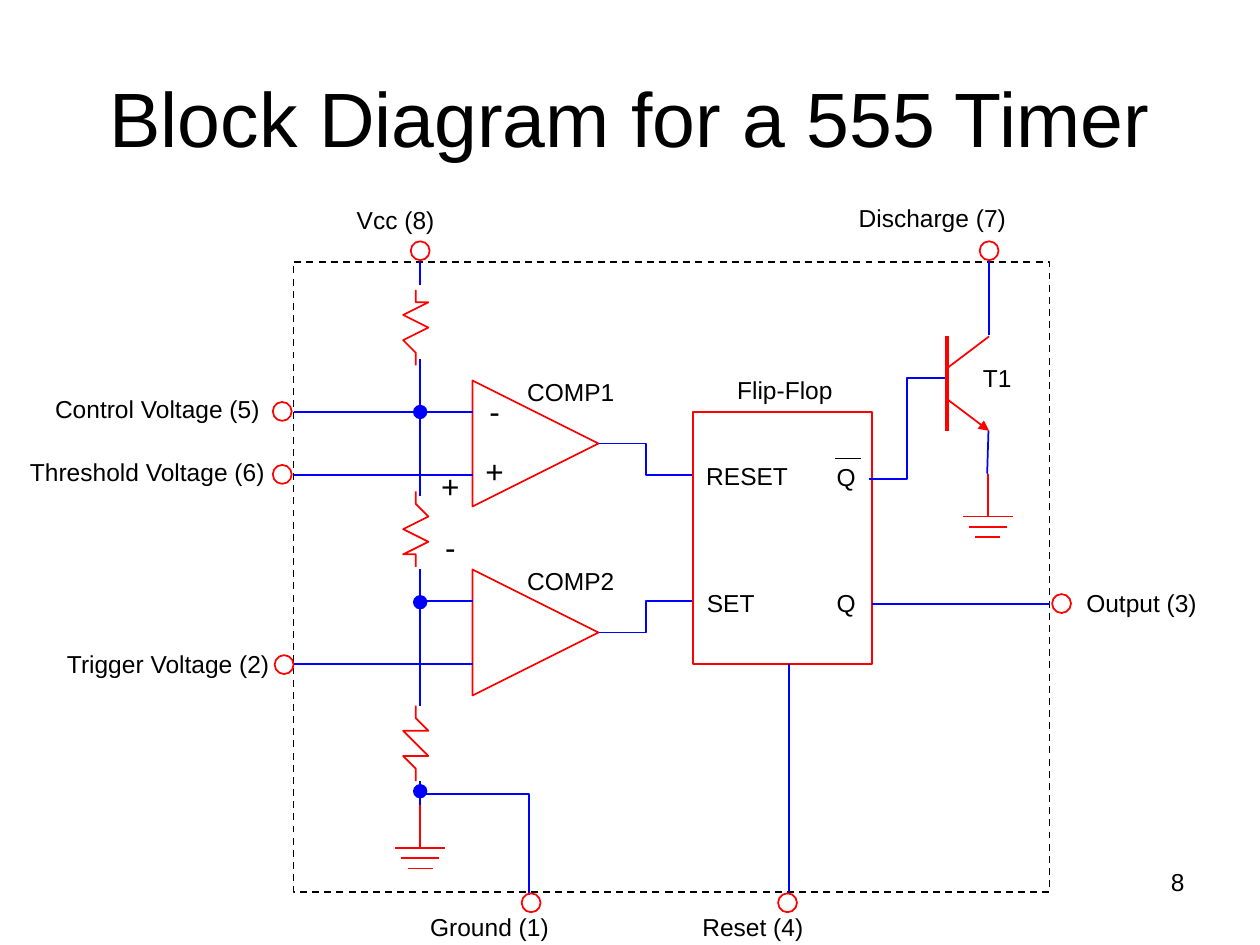
from lxml import etree
from pptx import Presentation
from pptx.dml.color import RGBColor
from pptx.enum.dml import MSO_LINE
from pptx.enum.shapes import MSO_CONNECTOR, MSO_SHAPE
from pptx.enum.text import MSO_ANCHOR, PP_ALIGN
from pptx.oxml.ns import qn
from pptx.util import Inches, Pt

STRAIGHT, ELBOW = MSO_CONNECTOR.STRAIGHT, MSO_CONNECTOR.ELBOW
RECTANGLE, OVAL, TRIANGLE = MSO_SHAPE.RECTANGLE, MSO_SHAPE.OVAL, MSO_SHAPE.ISOSCELES_TRIANGLE
DASH = MSO_LINE.DASH
CENTER, RIGHT = PP_ALIGN.CENTER, PP_ALIGN.RIGHT
MIDDLE, TOP = MSO_ANCHOR.MIDDLE, MSO_ANCHOR.TOP

COLUMNS, ROWS = 100, 75
CELL = Inches(0.1)
PART, WIRE, INK = "FF0000", "0000FF", "000000"
RAIL = 33.35
FRAME_LEFT, FRAME_TOP, FRAME_WIDTH, FRAME_HEIGHT = 23.3, 20.8, 60, 50
FRAME_RIGHT = FRAME_LEFT + FRAME_WIDTH
FRAME_BOTTOM = FRAME_TOP + FRAME_HEIGHT
COMPARATOR_LEFT, COMPARATOR_SIZE = 37.5, 10
COMPARATOR_TOPS = (30.2, 45.2)
LATCH_LEFT, LATCH_TOP, LATCH_WIDTH, LATCH_HEIGHT = 55, 32.7, 14.2, 20
LATCH_RIGHT = LATCH_LEFT + LATCH_WIDTH
EMITTER = 78.45

LABELS = [
    ("Control Voltage (5)", 2.2, 30.8, 20.6),
    ("Threshold Voltage (6)", 1.1, 35.8, 21.2),
    ("Trigger Voltage (2)", 4.3, 51, 18.1),
    ("Ground (1)", 33.1, 71.9, 11.5),
    ("Vcc (8)", 27.3, 15.8, 8.2),
    ("Discharge (7)", 67.1, 15.6, 13.8),
    ("Reset (4)", 54.7, 71.9, 10.1),
    ("Output (3)", 85.2, 46.2, 10.8),
    ("COMP1", 40.8, 29.4, 9),
    ("COMP2", 40.8, 44.4, 9),
    ("Flip-Flop", 57.5, 29.3, 9.6),
    ("RESET", 55, 36.1, 8.6),
    ("SET", 55.1, 46.2, 5.8),
    ("Q", 65.4, 36.2, 3.5),
    ("Q", 65.4, 46.2, 3.5),
    ("T1", 77, 28.3, 4.3),
]
PINS = [(22.4, 32.65), (22.4, 37.65), (22.55, 52.75), (33.35, 19.9),
        (42.15, 71.65), (62.5, 71.65), (78.5, 19.9), (84.25, 47.9)]
NODES = [32.7, 47.8, 62.8]
WIRES = [
    (FRAME_LEFT, 32.7, COMPARATOR_LEFT, 32.7),
    (FRAME_LEFT, 37.7, COMPARATOR_LEFT, 37.7),
    (RAIL, 47.7, COMPARATOR_LEFT, 47.7),
    (FRAME_LEFT, 52.7, COMPARATOR_LEFT, 52.7),
    (RAIL, 20.6, RAIL, 22.6),
    (RAIL, 28.5, RAIL, 39.4),
    (RAIL, 45.2, RAIL, 56),
    (RAIL, 62, RAIL, 64),
    (62.6, LATCH_TOP + LATCH_HEIGHT, 62.6, FRAME_BOTTOM),
    (LATCH_RIGHT, 47.95, FRAME_RIGHT, 47.95),
    (78.5, 20.6, 78.5, 26.6),
    (EMITTER, 34.2, EMITTER - 0.1, 37.6),
]


def color(value):
    """Turn a hex string into a colour."""
    return RGBColor.from_string(value)


def cells(*lengths):
    """Convert grid lengths to slide units."""
    return [round(length * CELL) for length in lengths]


def set_values(target, values):
    """Set attributes from a dict of format values."""
    for name, value in values.items():
        setattr(target, name, value)


def set_line(shape, line_color, width=1):
    """Give an outline its colour and width."""
    shape.line.color.rgb = color(line_color)
    shape.line.width = Pt(width)


def add_text(slide, lines, left, top, width, height=3.4, size=14,
             align=CENTER, anchor=TOP, wrap=False, gap=0):
    """Add a text box with one paragraph for each line."""
    frame = slide.shapes.add_textbox(*cells(left, top, width, height)).text_frame
    set_values(frame, {"word_wrap": wrap, "vertical_anchor": anchor})
    for index, line in enumerate(lines):
        paragraph = frame.paragraphs[0] if index == 0 else frame.add_paragraph()
        paragraph.text = line
        paragraph.alignment = align
        if index:
            paragraph.space_before = Pt(gap)
        set_values(paragraph.font, {"name": "Arial", "size": Pt(size)})
        paragraph.font.color.rgb = color(INK)


def add_line(slide, start_x, start_y, end_x, end_y, line_color=WIRE, width=1,
             kind=STRAIGHT, arrow=False):
    """Add a straight or elbow connector, with an arrowhead if asked."""
    line = slide.shapes.add_connector(kind, *cells(start_x, start_y, end_x, end_y))
    set_line(line, line_color, width)
    if arrow:
        etree.SubElement(line.line._get_or_add_ln(), qn("a:tailEnd"), type="triangle")
    etree.SubElement(line._element.spPr, qn("a:effectLst"))


def add_outline(slide, kind, left, top, width, height, line_color=PART, fill=None):
    """Add a preset shape, hollow unless a fill is given."""
    shape = slide.shapes.add_shape(kind, *cells(left, top, width, height))
    shape.shadow.inherit = False
    set_line(shape, line_color)
    if fill:
        shape.fill.solid()
        shape.fill.fore_color.rgb = color(fill)
    else:
        shape.fill.background()
    return shape


def add_circle(slide, center_x, center_y, diameter, line_color=PART, fill=None):
    """Add a circle around a centre."""
    radius = diameter / 2
    add_outline(slide, OVAL, center_x - radius, center_y - radius,
                diameter, diameter, line_color, fill)


def add_path(slide, points, line_color):
    """Add an open outline through the points."""
    builder = slide.shapes.build_freeform(*points[0], scale=CELL)
    builder.add_line_segments(points[1:], close=False)
    shape = builder.convert_to_shape()
    shape.shadow.inherit = False
    shape.fill.background()
    set_line(shape, line_color)


def add_resistor(slide, top):
    """Add a zigzag resistor on the supply rail."""
    zigzag = [(0, 0), (0, 1), (1, 1.5), (-1, 2.5), (1, 3.5), (-1, 4.5), (0, 5), (0, 6)]
    add_path(slide, [(RAIL + x, top + y) for x, y in zigzag], PART)


def add_ground(slide, center, top):
    """Add a ground symbol with a stem and three shrinking bars."""
    add_line(slide, center, top, center, top + 3.4, PART)
    for index in range(3):
        half, bar = 2 - index / 2, top + 3.4 + index * 0.82
        add_line(slide, center - half, bar, center + half, bar, PART)


def add_comparator(slide, top, output_row):
    """Add a comparator triangle and its wire to the flip-flop."""
    size = COMPARATOR_SIZE
    triangle = add_outline(slide, TRIANGLE, COMPARATOR_LEFT, top, size, size)
    triangle.rotation = 90
    add_line(slide, COMPARATOR_LEFT + size, top + size / 2, LATCH_LEFT, output_row, kind=ELBOW)


def add_transistor(slide):
    """Add the discharge transistor."""
    add_line(slide, 75.15, 26.7, 75.15, 34.2, PART, 2.25)
    add_line(slide, 75.2, 29.2, 78.5, 26.7, PART)
    add_line(slide, 75.2, 31.7, 78.5, 34.2, PART, arrow=True)


def main():
    """Build the timer diagram and save it."""
    presentation = Presentation()
    set_values(presentation, {"slide_width": COLUMNS * CELL, "slide_height": ROWS * CELL})
    slide = presentation.slides.add_slide(presentation.slide_layouts[6])
    add_text(slide, ["Block Diagram for a 555 Timer"], 5, 3, 90, 12.5, 44,
             anchor=MIDDLE, wrap=True)
    add_outline(slide, RECTANGLE, FRAME_LEFT, FRAME_TOP, FRAME_WIDTH, FRAME_HEIGHT,
                INK).line.dash_style = DASH
    for top, output_row in zip(COMPARATOR_TOPS, (37.7, 47.7)):
        add_comparator(slide, top, output_row)
    add_outline(slide, RECTANGLE, LATCH_LEFT, LATCH_TOP, LATCH_WIDTH, LATCH_HEIGHT)
    for wire in WIRES:
        add_line(slide, *wire)
    add_path(slide, [(LATCH_RIGHT, 37.8), (71.7, 37.8), (71.7, 30.5), (75, 30.5)], WIRE)
    add_path(slide, [(RAIL, 63.1), (42.1, 63.1), (42.1, 70.6)], WIRE)
    for top in (22.7, 39.4, 56):
        add_resistor(slide, top)
    add_ground(slide, RAIL, 63.9)
    add_ground(slide, EMITTER - 0.05, 37.6)
    add_transistor(slide)
    for row in NODES:
        add_circle(slide, RAIL, row, 1, WIRE, WIRE)
    for pin in PINS:
        add_circle(slide, *pin, 1.5)
    for text, left, top, width in LABELS:
        add_text(slide, [text], left, top, width)
    add_line(slide, 66.3, 36.4, 68.3, 36.4, INK)
    add_text(slide, ["-", "+"], 37.5, 30.6, 3.5, 8.9, 18, gap=13)
    add_text(slide, ["+", "-"], 34, 36.6, 3.5, 8.9, 18, gap=13)
    add_text(slide, ["8"], 71.7, 68.3, 23.3, 5.2, align=RIGHT, wrap=True)
    presentation.save("out.pptx")


if __name__ == "__main__":
    main()
